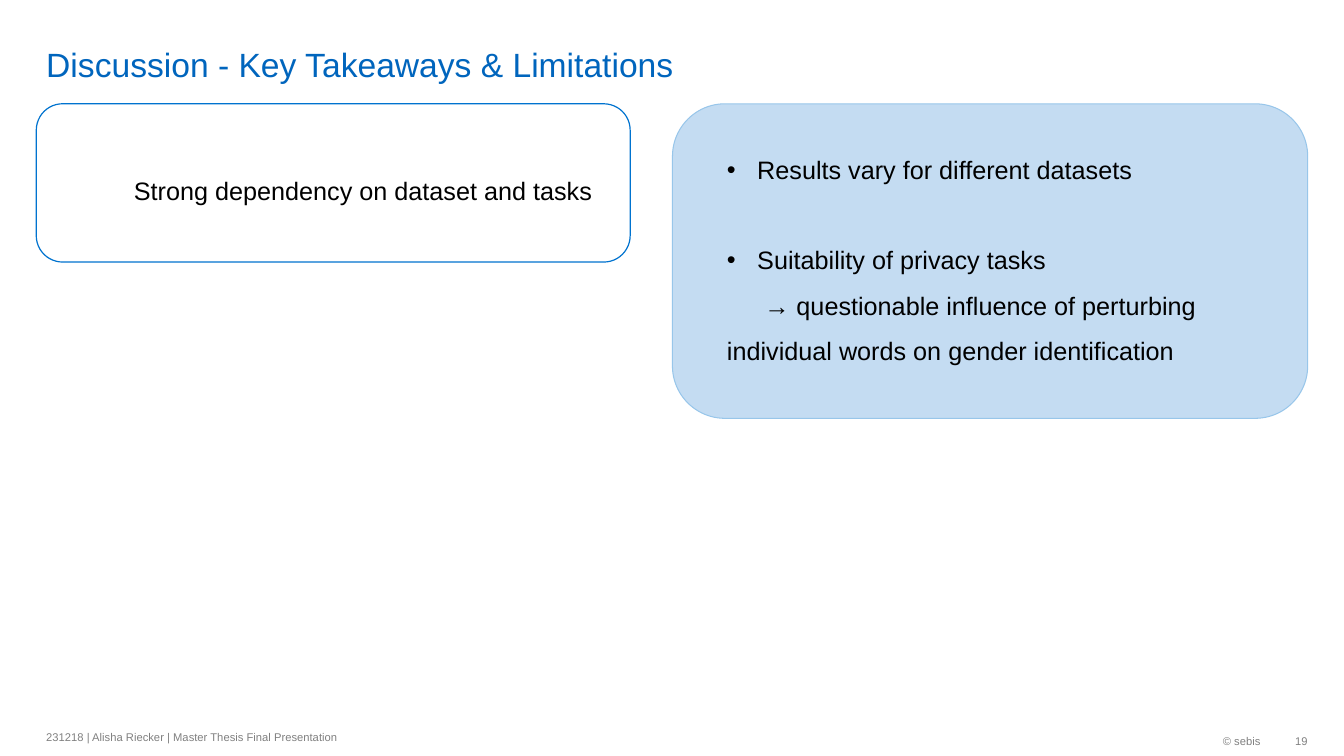
from lxml import etree
from pptx import Presentation
from pptx import util as u
from pptx.dml.color import RGBColor
from pptx.enum import shapes, text
from pptx.oxml.ns import qn

TITLE = "Discussion - Key Takeaways & Limitations"
TAKEAWAY = "Strong dependency on dataset and tasks"
LIMITATIONS = [
    {"text": "Results vary for different datasets", "bullet": True, "after": 32},
    {"text": "Suitability of privacy tasks", "bullet": True, "after": 0},
    {"text": "→ questionable influence of perturbing individual words on gender identification",
     "bullet": False, "after": 0},
]
FOOTER = "231218 | Alisha Riecker | Master Thesis Final Presentation"
COPYRIGHT = "© sebis"
PAGE = "19"

THEME = {
    "font": "Arial",
    "title": (24, "0065BD"),
    "body": (18, "000000"),
    "footer": (8, "808080"),
    "card": ("FFFFFF", "0073CF", 0.85),
    "panel": ("C4DCF2", "98C6EA", 0.75),
}
LEFT, CARD_TOP, RIGHT = 0.36, 1.03, 12.97
PANEL_LEFT = 6.67
INDENT, HANGING, ARROW_INDENT = 0.29, 0.3, 0.37


def style(paragraph, role):
    size, color = THEME[role]
    for run in paragraph.runs:
        run.font.name = THEME["font"]
        run.font.size = u.Pt(size)
        run.font.color.rgb = RGBColor.from_string(color)


def add_label(slide, box, content, role, anchor, align=text.PP_ALIGN.LEFT,
              wrap=True, insets=(0.1, 0.05, 0.1, 0.05)):
    label = slide.shapes.add_textbox(*map(u.Inches, box))
    frame = label.text_frame
    frame.word_wrap = wrap
    frame.vertical_anchor = anchor
    (frame.margin_left, frame.margin_top,
     frame.margin_right, frame.margin_bottom) = map(u.Inches, insets)
    frame.text = content
    paragraph = frame.paragraphs[0]
    paragraph.alignment = align
    style(paragraph, role)
    return paragraph


def add_card(slide, box, role):
    card = slide.shapes.add_shape(shapes.MSO_SHAPE.ROUNDED_RECTANGLE, *map(u.Inches, box))
    fill, line, width = THEME[role]
    card.shadow.inherit = False
    card.fill.solid()
    card.fill.fore_color.rgb = RGBColor.from_string(fill)
    card.line.color.rgb = RGBColor.from_string(line)
    card.line.width = u.Pt(width)
    return card


def indent(paragraph, left, first, bullet):
    properties = paragraph._p.get_or_add_pPr()
    properties.set("marL", str(u.Inches(left)))
    properties.set("indent", str(u.Inches(first)))
    if bullet:
        etree.SubElement(properties, qn("a:buFont"), typeface=THEME["font"])
        etree.SubElement(properties, qn("a:buChar"), char="•")
    else:
        etree.SubElement(properties, qn("a:buNone"))


def fill_panel(panel, items):
    frame = panel.text_frame
    frame.word_wrap = True
    frame.vertical_anchor = text.MSO_ANCHOR.TOP
    frame.margin_top = u.Inches(0.2)
    for index, item in enumerate(items):
        paragraph = frame.add_paragraph() if index else frame.paragraphs[0]
        paragraph.text = item["text"]
        if item["bullet"]:
            indent(paragraph, INDENT + HANGING, -HANGING, True)
        else:
            indent(paragraph, INDENT, ARROW_INDENT, False)
        paragraph.alignment = text.PP_ALIGN.LEFT
        paragraph.line_spacing = 1.5
        paragraph.space_after = u.Pt(item["after"])
        style(paragraph, "body")


def main():
    presentation = Presentation()
    presentation.slide_width = u.Inches(13.33)
    presentation.slide_height = u.Inches(7.5)
    slide = presentation.slides.add_slide(presentation.slide_layouts[6])
    middle, right = text.MSO_ANCHOR.MIDDLE, text.PP_ALIGN.RIGHT

    add_card(slide, (LEFT, CARD_TOP, 5.89, 1.57), "card")
    add_label(slide, (LEFT, 0.05, 11.58, 0.79), TITLE, "title",
              text.MSO_ANCHOR.BOTTOM, insets=(0.1, 0, 0.1, 0))
    add_label(slide, (10.26, 7.19, 2.34, 0.32), COPYRIGHT, "footer", middle, right)
    add_label(slide, (LEFT, 7.18, 6.38, 0.27), FOOTER, "footer", middle)
    add_label(slide, (RIGHT - 0.36, 7.19, 0.36, 0.32), PAGE, "footer", middle, right,
              wrap=False, insets=(0.1, 0.05, 0, 0.05))
    takeaway = add_label(slide, (1.23, 1.39, 4.8, 0.61), TAKEAWAY, "body", text.MSO_ANCHOR.TOP)
    takeaway.line_spacing = 2.0

    panel = add_card(slide, (PANEL_LEFT, CARD_TOP, RIGHT - PANEL_LEFT, 3.12), "panel")
    fill_panel(panel, LIMITATIONS)
    presentation.save("out.pptx")


if __name__ == "__main__":
    main()
